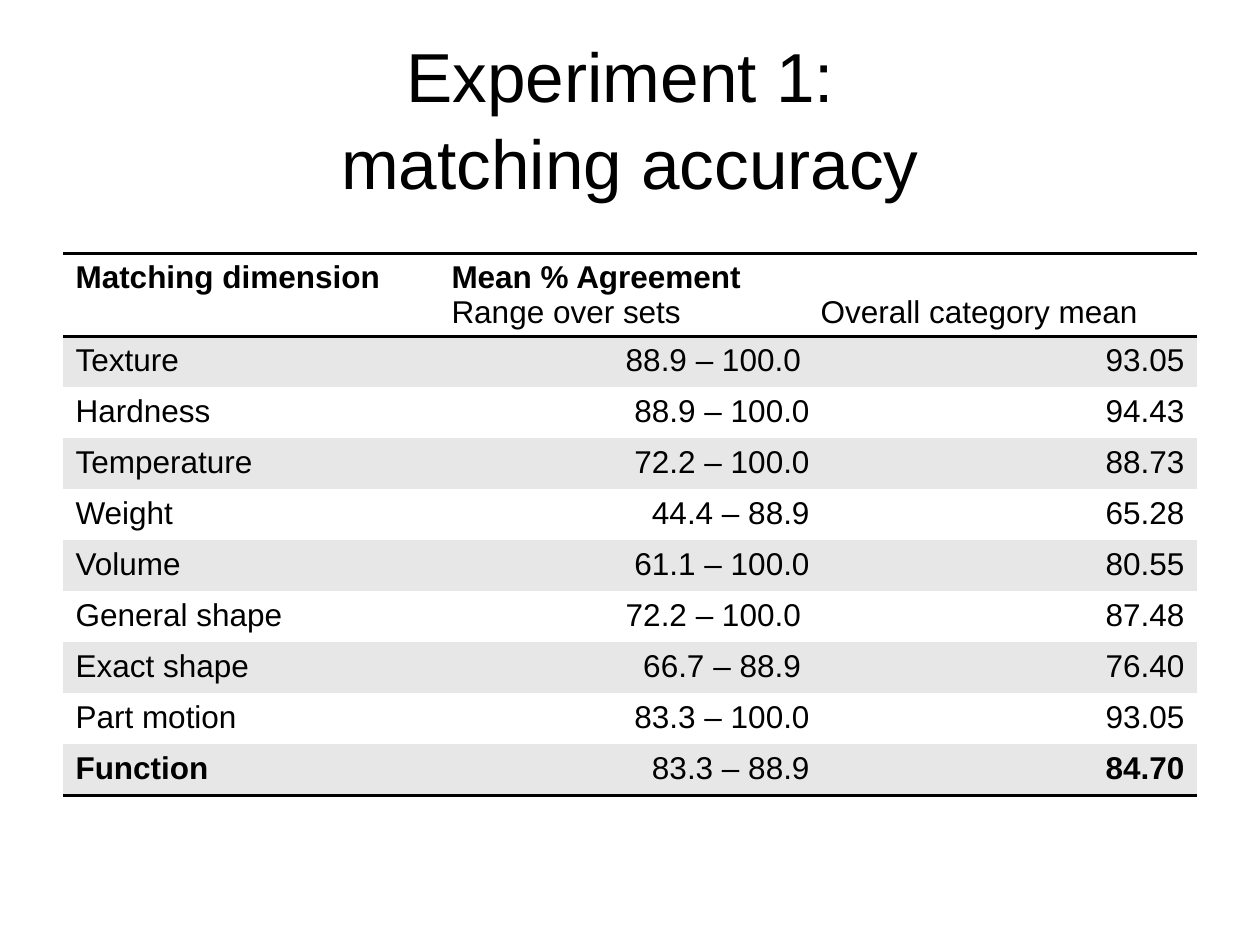
from dataclasses import dataclass
from typing import NamedTuple

from lxml.etree import SubElement
from pptx import Presentation
from pptx.dml.color import RGBColor
from pptx.enum.text import MSO_ANCHOR, PP_ALIGN
from pptx.oxml.ns import qn
from pptx.util import Inches, Pt


@dataclass(frozen=True)
class Theme:
    font: str = "Arial"
    ink: str = "000000"
    band: str = "E7E7E7"
    paper: str = "FFFFFF"
    title_size: float = 39.6
    body_size: float = 18
    rule: float = 2


class Result(NamedTuple):
    dimension: str
    set_range: str
    mean: str
    bold: bool = False


THEME = Theme()
SLIDE_W, SLIDE_H = Inches(10), Inches(7.5)
MARGIN = 0.05  # share of the slide's width
COLUMN_SHARES = (0.3315, 0.338, 0.3305)
HEADER_H, ROW_H = Inches(0.66), Inches(0.405)
PLAIN_TABLE_STYLE = "{2D5ABB26-0587-4C30-8999-92F81FD0307C}"
RESULTS = (
    Result("Texture", "88.9 – 100.0 ", "93.05"),
    Result("Hardness", "88.9 – 100.0", "94.43"),
    Result("Temperature", "72.2 – 100.0", "88.73"),
    Result("Weight", "44.4 – 88.9", "65.28"),
    Result("Volume", "61.1 – 100.0", "80.55"),
    Result("General shape", "72.2 – 100.0 ", "87.48"),
    Result("Exact shape", "66.7 – 88.9 ", "76.40"),
    Result("Part motion", "83.3 – 100.0", "93.05"),
    Result("Function", "83.3 – 88.9", "84.70", bold=True),
)


def write(p, text: str, *, size: float = THEME.body_size, bold: bool = False,
          align=PP_ALIGN.LEFT) -> None:
    p.text = text
    p.alignment = align
    for r in p.runs:
        r.font.name = THEME.font
        r.font.size = Pt(size)
        r.font.bold = bold
        r.font.color.rgb = RGBColor.from_string(THEME.ink)


def add_rules(cell, *sides: str) -> None:
    """Draw borders on the given sides (lnT, lnB); call before filling the cell."""
    tc_pr = cell._tc.get_or_add_tcPr()
    for side in sides:
        ln = SubElement(tc_pr, qn(f"a:{side}"), w=str(Pt(THEME.rule)))
        fill = SubElement(ln, qn("a:solidFill"))
        SubElement(fill, qn("a:srgbClr"), val=THEME.ink)


def fill_cell(cell, color: str) -> None:
    cell.fill.solid()
    cell.fill.fore_color.rgb = RGBColor.from_string(color)


def add_tab_stop(p, position: int) -> None:
    tabs = SubElement(p._p.get_or_add_pPr(), qn("a:tabLst"))
    SubElement(tabs, qn("a:tab"), pos=str(position), algn="l")


def add_title(s) -> None:
    title = s.shapes.title
    title.left, title.top = int(SLIDE_W * MARGIN), int(SLIDE_H * 0.04)
    title.width, title.height = int(SLIDE_W * (1 - 2 * MARGIN)), Inches(1.25)
    tf = title.text_frame
    tf.word_wrap = True
    tf.vertical_anchor = MSO_ANCHOR.MIDDLE
    p = tf.paragraphs[0]
    write(p, "Experiment 1: \vmatching accuracy", size=THEME.title_size,
          align=PP_ALIGN.CENTER)
    p.line_spacing = 1.04


def fill_header(table) -> None:
    for cell in table.rows[0].cells:
        add_rules(cell, "lnT", "lnB")
        fill_cell(cell, THEME.paper)
    table.cell(0, 1).merge(table.cell(0, 2))
    write(table.cell(0, 0).text_frame.paragraphs[0], "Matching dimension", bold=True)
    tf = table.cell(0, 1).text_frame
    write(tf.paragraphs[0], "Mean % Agreement", bold=True)
    p = tf.add_paragraph()
    write(p, "Range over sets\tOverall category mean")
    add_tab_stop(p, Inches(2.93))


def fill_result(table, row: int, result: Result) -> None:
    color = THEME.band if row % 2 else THEME.paper
    columns = (
        (result.dimension, result.bold, PP_ALIGN.LEFT),
        (result.set_range, False, PP_ALIGN.RIGHT),
        (result.mean, result.bold, PP_ALIGN.RIGHT),
    )
    for cell, (text, bold, align) in zip(table.rows[row].cells, columns):
        if row == len(RESULTS):
            add_rules(cell, "lnB")
        fill_cell(cell, color)
        write(cell.text_frame.paragraphs[0], text, bold=bold, align=align)


def add_results_table(s) -> None:
    width = int(SLIDE_W * (1 - 2 * MARGIN))
    frame = s.shapes.add_table(
        len(RESULTS) + 1, len(COLUMN_SHARES), int(SLIDE_W * MARGIN), Inches(2.01),
        width, HEADER_H + ROW_H * len(RESULTS))
    table = frame.table
    table.first_row = table.horz_banding = False
    table._tbl.tblPr.find(qn("a:tableStyleId")).text = PLAIN_TABLE_STYLE
    for column, share in zip(table.columns, COLUMN_SHARES):
        column.width = int(width * share)
    for i, row in enumerate(table.rows):
        row.height = ROW_H if i else HEADER_H
    fill_header(table)
    for i, result in enumerate(RESULTS, start=1):
        fill_result(table, i, result)


def main() -> None:
    prs = Presentation()
    prs.slide_width, prs.slide_height = SLIDE_W, SLIDE_H
    s = prs.slides.add_slide(prs.slide_layouts.get_by_name("Title Only"))
    add_title(s)
    add_results_table(s)
    prs.save("out.pptx")


if __name__ == "__main__":
    main()
